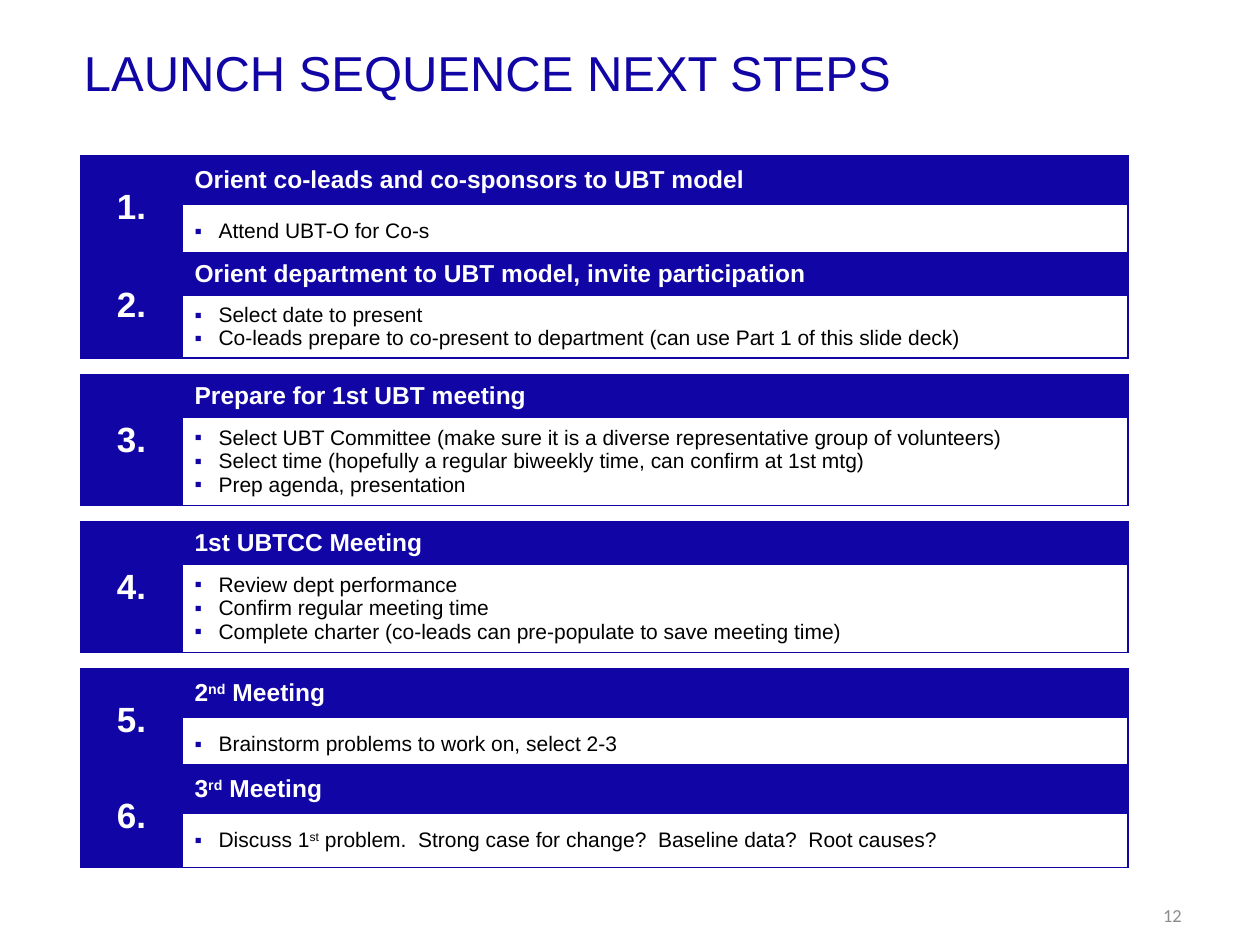
"""Build the launch sequence slide with its six numbered step tables."""
from lxml import etree
from pptx import Presentation
from pptx.dml.color import RGBColor
from pptx.enum.text import MSO_ANCHOR, PP_ALIGN
from pptx.oxml.ns import qn
from pptx.util import Pt

PX = 914400 / 126
NAVY = RGBColor(0x11, 0x05, 0xA5)
WHITE = RGBColor(0xFF, 0xFF, 0xFF)
BLACK = RGBColor(0, 0, 0)
GRAY = RGBColor(0x8C, 0x8C, 0x8C)
MIDDLE = MSO_ANCHOR.MIDDLE
CENTER = PP_ALIGN.CENTER
TABLE_LEFT, NUMBER_WIDTH, STEP_WIDTH = 81, 101, 946
BULLET_INDENT = 24
SUPERSCRIPT_MARK = "^"

STEPS = [
    (156, 48, 48, "Orient co-leads and co-sponsors to UBT model",
     ["Attend UBT-O for Co-s"]),
    (253, 40, 60, "Orient department to UBT model, invite participation",
     ["Select date to present",
      "Co-leads prepare to co-present to department (can use Part 1 of this slide deck)"]),
    (375, 40, 83, "Prepare for 1st UBT meeting",
     ["Select UBT Committee (make sure it is a diverse representative group of volunteers)",
      "Select time (hopefully a regular biweekly time, can confirm at 1st mtg)",
      "Prep agenda, presentation"]),
    (522, 40, 83, "1st UBTCC Meeting",
     ["Review dept performance",
      "Confirm regular meeting time",
      "Complete charter (co-leads can pre-populate to save meeting time)"]),
    (669, 48, 48, "2^nd^ Meeting",
     ["Brainstorm problems to work on, select 2-3"]),
    (765, 48, 52, "3^rd^ Meeting",
     ["Discuss 1^st^ problem.  Strong case for change?  Baseline data?  Root causes?"]),
]


def px(length):
    return round(length * PX)


def write(paragraph, text, size, color, bold=False, name="Arial"):
    for index, part in enumerate(text.split(SUPERSCRIPT_MARK)):
        run = paragraph.add_run()
        run.text = part
        run.font.size = Pt(size)
        run.font.name = name
        run.font.bold = bold
        run.font.color.rgb = color
        if index % 2:
            run.font._element.set("baseline", "30000")


presentation = Presentation()
presentation.slide_width = px(1260)
presentation.slide_height = px(945)
slide = presentation.slides.add_slide(presentation.slide_layouts[6])

title = slide.shapes.add_textbox(px(84), px(25), px(1003), px(101)).text_frame
title.word_wrap = True
title.vertical_anchor = MIDDLE
title.margin_left = 0
title.paragraphs[0].line_spacing = 0.9
write(title.paragraphs[0], "LAUNCH SEQUENCE NEXT STEPS", 28, NAVY)

page_number = slide.shapes.add_textbox(px(1129), px(890), px(87), px(50)).text_frame
page_number.word_wrap = True
page_number.vertical_anchor = MIDDLE
page_number.paragraphs[0].alignment = CENTER
write(page_number.paragraphs[0], "12", 10.5, GRAY, name="Calibri")

for number, (top, heading_height, body_height, heading, bullets) in enumerate(STEPS, 1):
    table = slide.shapes.add_table(
        2, 2, px(TABLE_LEFT), px(top), px(NUMBER_WIDTH + STEP_WIDTH),
        px(heading_height + body_height)).table
    table.columns[0].width = px(NUMBER_WIDTH)
    table.columns[1].width = px(STEP_WIDTH)
    table.rows[0].height = px(heading_height)
    table.rows[1].height = px(body_height)

    number_cell, heading_cell = table.cell(0, 0), table.cell(0, 1)
    body_cell = table.cell(1, 1)
    for cell in table.iter_cells():
        cell.vertical_anchor = MIDDLE
        properties = cell._tc.get_or_add_tcPr()
        for side in ("a:lnL", "a:lnR", "a:lnT", "a:lnB"):
            line = etree.SubElement(properties, qn(side), w=str(Pt(1)))
            line_fill = etree.SubElement(line, qn("a:solidFill"))
            etree.SubElement(line_fill, qn("a:srgbClr"), val=str(NAVY))
        cell.fill.solid()
        cell.fill.fore_color.rgb = NAVY
    body_cell.fill.fore_color.rgb = WHITE
    number_cell.merge(table.cell(1, 0))

    number_paragraph = number_cell.text_frame.paragraphs[0]
    number_paragraph.alignment = CENTER
    write(number_paragraph, f"{number}.", 20, WHITE, bold=True)
    write(heading_cell.text_frame.paragraphs[0], heading, 14, WHITE, bold=True)

    body = body_cell.text_frame
    for index, bullet in enumerate(bullets):
        paragraph = body.add_paragraph() if index else body.paragraphs[0]
        properties = paragraph._p.get_or_add_pPr()
        properties.set("marL", str(px(BULLET_INDENT)))
        properties.set("indent", str(-px(BULLET_INDENT)))
        bullet_color = etree.SubElement(properties, qn("a:buClr"))
        etree.SubElement(bullet_color, qn("a:srgbClr"), val=str(NAVY))
        etree.SubElement(properties, qn("a:buFont"), typeface="Arial")
        etree.SubElement(properties, qn("a:buChar"), char="▪")
        write(paragraph, bullet, 12, BLACK)

presentation.save("out.pptx")
